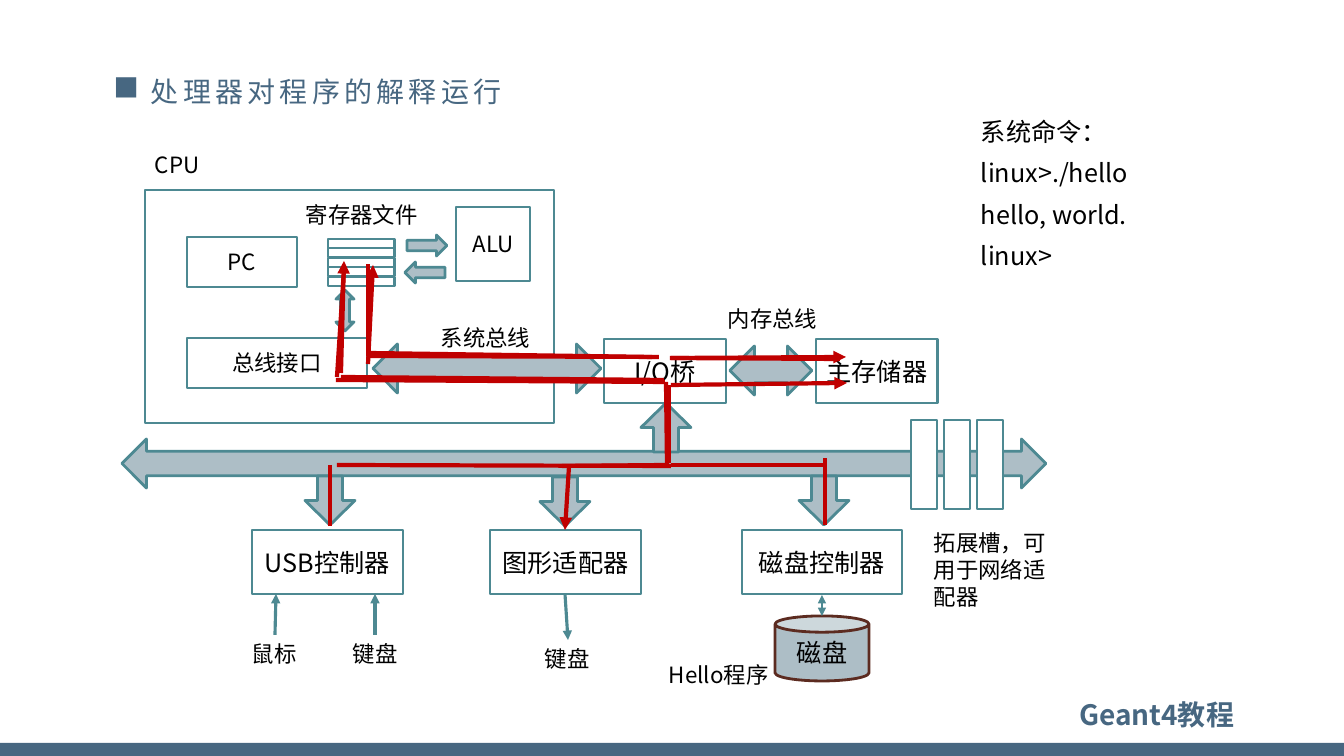
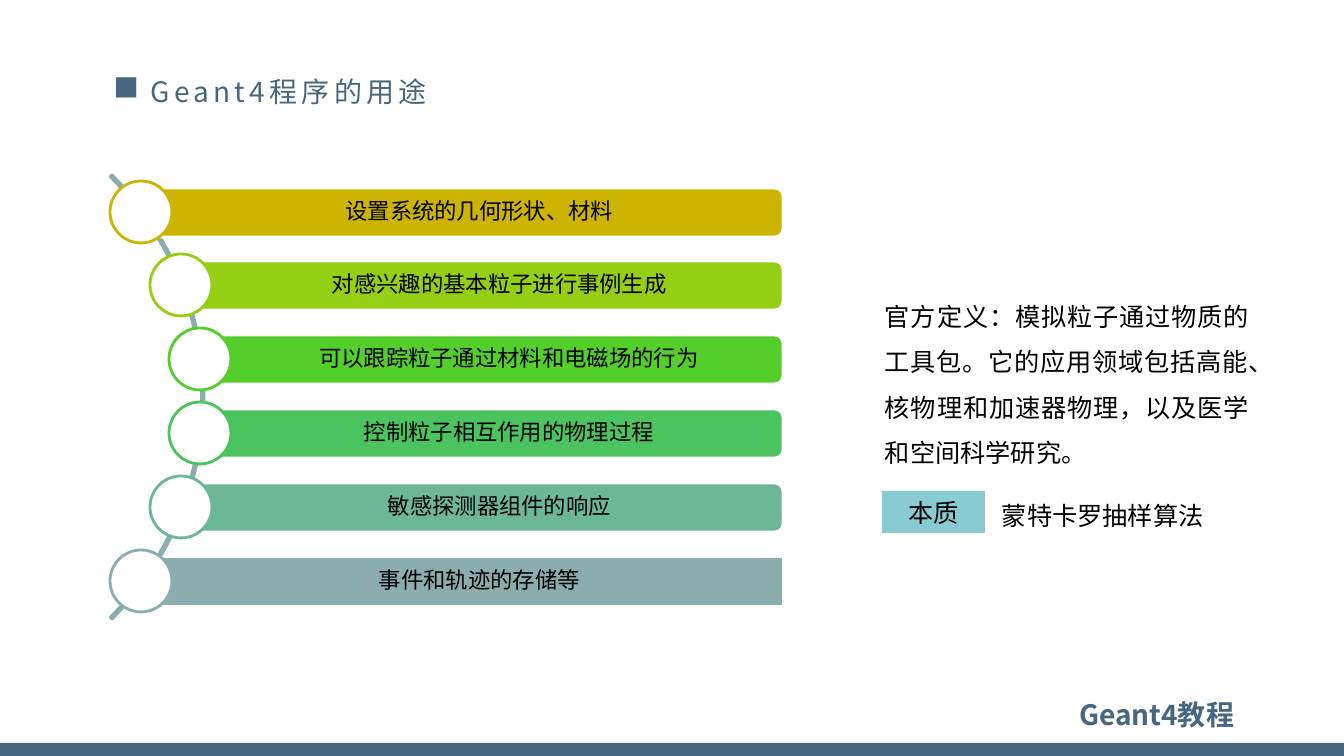
from lxml.etree import SubElement
from pptx import Presentation
from pptx.dml.color import RGBColor
from pptx.enum.shapes import MSO_CONNECTOR, MSO_SHAPE
from pptx.enum.text import MSO_ANCHOR, PP_ALIGN
from pptx.oxml.ns import qn
from pptx.util import Emu, Pt

FONT = "Noto Sans CJK SC"
NAVY = RGBColor(0x47, 0x67, 0x81)
TEAL = RGBColor(0x4D, 0x89, 0x92)
GREY = RGBColor(0xAD, 0xBE, 0xC6)
BROWN = RGBColor(0x5C, 0x2B, 0x20)
RED = RGBColor(0xC0, 0x00, 0x00)
AQUA = RGBColor(0x89, 0xCB, 0xD3)
SAGE = RGBColor(0x8C, 0xAD, 0xAE)
WHITE = RGBColor(0xFF, 0xFF, 0xFF)
BLACK = RGBColor(0x00, 0x00, 0x00)
PX = 914400 / 100.8


def draw(slide, kind, box, text="", size=16, fill=None, line=None, color=BLACK,
         align=None, space=None, wrap=True):
    """Add a preset shape, or a text box when kind is None."""
    place = [Emu(round(n * PX)) for n in box]
    if kind is None:
        shape = slide.shapes.add_textbox(*place)
    else:
        shape = slide.shapes.add_shape(kind, *place)
        shape.shadow.inherit = False
        if fill is None:
            shape.fill.background()
        else:
            shape.fill.solid()
            shape.fill.fore_color.rgb = fill
        if line is None:
            shape.line.fill.background()
        else:
            shape.line.color.rgb = line
            shape.line.width = Pt(2)
        align = PP_ALIGN.CENTER
    if text:
        frame = shape.text_frame
        frame.word_wrap = wrap
        if kind is not None:
            frame.vertical_anchor = MSO_ANCHOR.MIDDLE
        frame.text = text
        for par in frame.paragraphs:
            par.alignment = align
            par.line_spacing = space
            par.font.size, par.font.name = Pt(size), FONT
            par.font.color.rgb = color
    return shape


def join(slide, ends, color, width, head=False, tail=False):
    """Add a straight line with optional arrowheads."""
    link = slide.shapes.add_connector(
        MSO_CONNECTOR.STRAIGHT, *[Emu(round(n * PX)) for n in ends])
    link.line.color.rgb = color
    link.line.width = Pt(width)
    props = link.element.spPr
    for tag, on in (("a:headEnd", head), ("a:tailEnd", tail)):
        if on:
            SubElement(props.find(qn("a:ln")), qn(tag), type="triangle")
    SubElement(props, qn("a:effectLst"))


deck = Presentation()
deck.slide_width, deck.slide_height = Emu(round(1344 * PX)), Emu(round(756 * PX))
layout = deck.slide_layouts[5]

# Slides and titles
slides = []
for title in ("处理器对程序的解释运行", "Geant4程序的用途"):
    slide = deck.slides.add_slide(layout)
    slides.append(slide)
    head = slide.shapes.title
    head.left, head.top, head.width, head.height = [
        Emu(round(n * PX)) for n in (103, 61, 449, 65)]
    head.text_frame.text = title
    head.text_frame.vertical_anchor = MSO_ANCHOR.MIDDLE
    par = head.text_frame.paragraphs[0]
    par.alignment, par.line_spacing = PP_ALIGN.LEFT, 0.9
    props = head.element.find(".//" + qn("a:pPr"))
    props.set("marL", "342900")
    props.set("indent", "-342900")
    SubElement(props, qn("a:buSzPct"), val="125000")
    SubElement(props, qn("a:buChar"), char="■")
    par.font.size, par.font.name = Pt(20), FONT
    par.font.color.rgb = NAVY
    props.find(qn("a:defRPr")).set("spc", "300")
    head.element.find(".//" + qn("a:r")).get_or_add_rPr().set("spc", "300")
flow, uses = slides

# Shared band and footer, moved to the layout
band = draw(flow, MSO_SHAPE.RECTANGLE, (0, 743, 1344, 13), fill=NAVY)
foot = draw(flow, None, (961, 693, 283, 44), "Geant4教程", 20,
            color=NAVY, align=PP_ALIGN.RIGHT)
foot.text_frame.paragraphs[0].font.bold = True
for part in (band, foot):
    layout.shapes.element.append(part.element)

# Slide 1: shell session
shell = draw(flow, None, (971, 115, 350, 175),
             "系统命令：\nlinux>./hello\nhello, world.\nlinux>", 18, space=0.9)
for par in shell.text_frame.paragraphs[1:]:
    par.space_before = Pt(10)

# Units
for box, text, size in (
    ((145, 190, 409, 233), "", 16),
    ((604, 339, 122, 64), "I/O桥", 18),
    ((816, 339, 122, 64), "主存储器", 18),
    ((252, 530, 151, 64), "USB控制器", 18),
    ((490, 530, 151, 64), "图形适配器", 18),
    ((742, 530, 160, 64), "磁盘控制器", 18),
    ((187, 338, 180, 50), "总线接口", 16),
    ((187, 237, 110, 50), "PC", 16),
    ((456, 207, 74, 74), "ALU", 16),
):
    draw(flow, MSO_SHAPE.RECTANGLE, box, text, size, WHITE, TEAL)

# Buses
for kind, box in (
    (MSO_SHAPE.LEFT_RIGHT_ARROW, (122, 439, 924, 49)),
    (MSO_SHAPE.UP_ARROW, (641, 403, 50, 49)),
    (MSO_SHAPE.DOWN_ARROW, (305, 476, 50, 49)),
    (MSO_SHAPE.DOWN_ARROW, (540, 477, 50, 49)),
    (MSO_SHAPE.DOWN_ARROW, (799, 476, 50, 49)),
    (MSO_SHAPE.LEFT_RIGHT_ARROW, (730, 346, 82, 49)),
    (MSO_SHAPE.LEFT_RIGHT_ARROW, (373, 344, 228, 49)),
    (MSO_SHAPE.RIGHT_ARROW, (407, 235, 40, 21)),
    (MSO_SHAPE.LEFT_ARROW, (405, 262, 40, 21)),
    (MSO_SHAPE.UP_DOWN_ARROW, (336, 290, 18, 41)),
):
    draw(flow, kind, box, fill=GREY, line=TEAL)

# Registers, slots and disk
for i in range(5):
    draw(flow, MSO_SHAPE.RECTANGLE, (328, 239 + i * 19 // 2, 67, 9),
         fill=WHITE, line=TEAL)
for i in range(3):
    draw(flow, MSO_SHAPE.RECTANGLE, (911 + i * 33, 420, 26, 89),
         fill=WHITE, line=TEAL)
draw(flow, MSO_SHAPE.CAN, (775, 616, 94, 65), "磁盘", 18, GREY, BROWN)

# Labels
for left, top, width, text in (
    (296, 196, 133, "寄存器文件"),
    (145, 146, 67, "CPU"),
    (431, 319, 111, "系统总线"),
    (718, 300, 111, "内存总线"),
    (242, 635, 66, "鼠标"),
    (343, 635, 66, "键盘"),
    (535, 640, 66, "键盘"),
    (659, 656, 134, "Hello程序"),
):
    draw(flow, None, (left, top, width, 37), text, wrap=False)
draw(flow, None, (924, 524, 134, 92), "拓展槽，可用于网络适配器")

# Device links
for ends in ((275, 635, 276, 594), (375, 635, 375, 594), (565, 594, 568, 640)):
    join(flow, ends, TEAL, 2.25, tail=True)
join(flow, (822, 595, 822, 616), TEAL, 1, head=True, tail=True)

# Data paths: plain strokes, then arrows
for ends in (
    (330, 465, 330, 526), (671, 466, 337, 465), (669, 461, 669, 385),
    (665, 382, 336, 380), (368, 356, 368, 264), (659, 357, 368, 356),
    (825, 525, 825, 458), (825, 465, 671, 465), (669, 463, 669, 389),
    (671, 358, 840, 359), (369, 353, 652, 357), (344, 269, 337, 377),
    (664, 380, 341, 377), (667, 464, 666, 382), (666, 465, 562, 466),
):
    join(flow, ends, RED, 3)
for ends in (
    (341, 373, 344, 261), (670, 358, 846, 357), (671, 385, 847, 383),
    (368, 364, 373, 265), (569, 467, 565, 530),
):
    join(flow, ends, RED, 3, tail=True)

# Slide 2: arc behind the list
arc = draw(uses, MSO_SHAPE.BLOCK_ARC, (-424, 83, 628, 628), line=SAGE)
for i, val in enumerate((189, 27, 0.004)):
    arc.adjustments[i] = val

# Bars, each with a circle centred on its left end
ROUND = MSO_SHAPE.ROUNDED_RECTANGLE
for i, (left, kind, hue, text) in enumerate((
    (141, ROUND, RGBColor(0xCC, 0xB4, 0x00), "设置系统的几何形状、材料"),
    (181, ROUND, RGBColor(0x95, 0xCF, 0x13), "对感兴趣的基本粒子进行事例生成"),
    (200, ROUND, RGBColor(0x54, 0xCF, 0x29), "可以跟踪粒子通过材料和电磁场的行为"),
    (200, ROUND, RGBColor(0x4B, 0xC3, 0x5F), "控制粒子相互作用的物理过程"),
    (181, ROUND, RGBColor(0x6D, 0xB7, 0x99), "敏感探测器组件的响应"),
    (141, MSO_SHAPE.RECTANGLE, SAGE, "事件和轨迹的存储等"),
)):
    top = 188 + i * 369 // 5
    bar = draw(uses, kind, (left, top, 783 - left, 49), text, 16, hue, WHITE,
               space=0.9)
    bar.text_frame.margin_left = Emu(round(39 * PX))
    bar.text_frame.margin_right = Emu(round(4 * PX))
    draw(uses, MSO_SHAPE.OVAL, (left - 31, top - 7, 62, 62), fill=WHITE, line=hue)

# Definition and essence
draw(uses, MSO_SHAPE.RECTANGLE, (882, 491, 103, 42), "本质", 18, AQUA)
for box, text in (
    ((875, 281, 384, 231),
     "官方定义：模拟粒子通过物质的工具包。它的应用领域包括高能、"
     "核物理和加速器物理，以及医学和空间科学研究。"),
    ((992, 480, 310, 65), "蒙特卡罗抽样算法"),
):
    draw(uses, None, box, text, 18, align=PP_ALIGN.JUSTIFY, space=1.5)

# Same typeface for East Asian text
for page in (layout, flow, uses):
    for latin in list(page.element.iter(qn("a:latin"))):
        east = SubElement(latin.getparent(), qn("a:ea"), typeface=FONT)
        latin.addnext(east)

deck.save("out.pptx")
